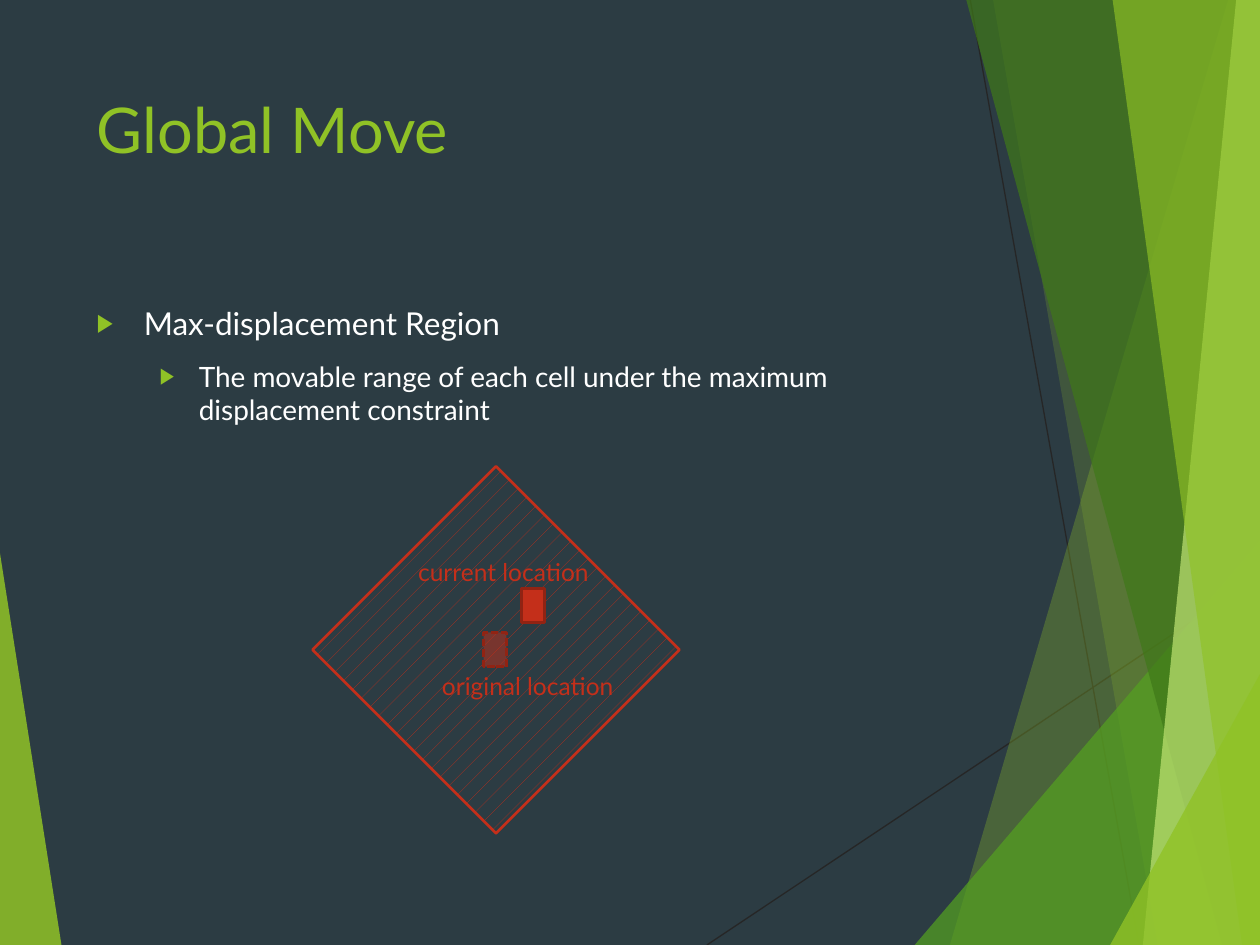
from lxml import etree
from pptx import Presentation
from pptx.dml.color import RGBColor
from pptx.enum.dml import MSO_LINE, MSO_PATTERN
from pptx.enum.shapes import MSO_CONNECTOR, MSO_SHAPE
from pptx.enum.text import MSO_ANCHOR, MSO_AUTO_SIZE, PP_ALIGN
from pptx.oxml.ns import qn
from pptx.util import Cm, Pt

DIAMOND, RECTANGLE = MSO_SHAPE.DIAMOND, MSO_SHAPE.RECTANGLE
STRAIGHT = MSO_CONNECTOR.STRAIGHT
DOTTED_HATCH = MSO_PATTERN.PERCENT_5
SHORT_DASH = MSO_LINE.SQUARE_DOT
LEFT, TOP = PP_ALIGN.LEFT, MSO_ANCHOR.TOP
FIXED, GROW = MSO_AUTO_SIZE.NONE, MSO_AUTO_SIZE.SHAPE_TO_FIT_TEXT

SLATE = RGBColor(0x2C, 0x3C, 0x43)
CHARCOAL = RGBColor(0x26, 0x26, 0x26)
LIME = RGBColor(0x90, 0xC2, 0x26)
GREEN = RGBColor(0x54, 0xA0, 0x21)
FOREST = RGBColor(0x3F, 0x78, 0x19)
PALE_LIME = RGBColor(0xC0, 0xE4, 0x74)
WHITE = RGBColor(0xFF, 0xFF, 0xFF)
RED = RGBColor(0xC4, 0x2F, 0x1A)
DARK_RED = RGBColor(0x91, 0x23, 0x13)

WIDTH, HEIGHT = 25.4, 19.05  # cm


class SlideBuilder:
    """Holds the style and the current slide; lengths are in centimetres."""

    font = "Lato"
    outline = Pt(1.5)

    def __init__(self, slide):
        self.slide = slide
        self.shapes = slide.shapes
        slide.background.fill.solid()
        slide.background.fill.fore_color.rgb = SLATE

    def style(self, paragraph, size, color):
        paragraph.alignment = LEFT
        for run in paragraph.runs:
            run.font.name = self.font
            run.font.size = Pt(size)
            run.font.color.rgb = color

    def paint(self, shape, color, opacity=100):
        shape.shadow.inherit = False
        shape.fill.solid()
        shape.fill.fore_color.rgb = color
        if opacity < 100:
            solid = shape.fill._xPr.find(qn("a:solidFill"))
            etree.SubElement(solid[0], qn("a:alpha"), val=str(opacity * 1000))

    def edge(self, shape, color):
        shape.line.color.rgb = color
        shape.line.width = self.outline

    def line(self, start, end):
        connector = self.shapes.add_connector(
            STRAIGHT, *(Cm(value) for value in start + end))
        connector.line.color.rgb = CHARCOAL
        connector.line.width = Pt(0.75)
        etree.SubElement(connector._element.spPr, qn("a:effectLst"))

    def polygon(self, points, color, opacity):
        first, *rest = [(Cm(x), Cm(y)) for x, y in points]
        builder = self.shapes.build_freeform(*first)
        builder.add_line_segments(rest, close=True)
        shape = builder.convert_to_shape()
        self.paint(shape, color, opacity)
        shape.line.fill.background()

    def title(self, text, left, top, width, height):
        title = self.shapes.title
        title.left, title.top = Cm(left), Cm(top)
        title.width, title.height = Cm(width), Cm(height)
        frame = title.text_frame
        frame.text = text
        frame.vertical_anchor = TOP
        frame.auto_size = FIXED
        self.style(frame.paragraphs[0], 36, LIME)

    def bullets(self, items, left, top, width, height):
        frame = self.shapes.add_textbox(
            Cm(left), Cm(top), Cm(width), Cm(height)).text_frame
        frame.word_wrap = True
        for index, (text, level, size, margin, hanging) in enumerate(items):
            paragraph = frame.add_paragraph() if index else frame.paragraphs[0]
            paragraph.text = text
            paragraph.level = level
            paragraph.space_before = Pt(10)
            self.style(paragraph, size, WHITE)
            props = paragraph._p.get_or_add_pPr()
            props.set("marL", str(Cm(margin)))
            props.set("indent", str(-Cm(hanging)))
            bullet_color = etree.SubElement(props, qn("a:buClr"))
            etree.SubElement(bullet_color, qn("a:srgbClr"), val=str(LIME))
            etree.SubElement(props, qn("a:buSzPct"), val="80000")
            etree.SubElement(props, qn("a:buFont"), typeface="Arial")
            etree.SubElement(props, qn("a:buChar"), char="▶")

    def region(self, left, top, size):
        diamond = self.shapes.add_shape(
            DIAMOND, Cm(left), Cm(top), Cm(size), Cm(size))
        diamond.shadow.inherit = False
        diamond.fill.patterned()
        diamond.fill.pattern = DOTTED_HATCH
        diamond.fill.fore_color.rgb = RED
        diamond.fill.back_color.rgb = SLATE
        self.edge(diamond, RED)

    def cell(self, left, top, opacity=100, dash=None):
        cell = self.shapes.add_shape(
            RECTANGLE, Cm(left), Cm(top), Cm(0.46), Cm(0.69))
        self.paint(cell, RED, opacity)
        self.edge(cell, DARK_RED)
        if dash:
            cell.line.dash_style = dash

    def label(self, text, left, top, width):
        frame = self.shapes.add_textbox(
            Cm(left), Cm(top), Cm(width), Cm(0.86)).text_frame
        frame.text = text
        frame.word_wrap = False
        frame.auto_size = GROW
        self.style(frame.paragraphs[0], 14, RED)


def band(top_x, bottom_x):
    """Outline from a slanted edge to the right side of the slide."""
    return [(top_x, 0), (bottom_x, HEIGHT), (WIDTH, HEIGHT), (WIDTH, 0)]


def corner(bottom_x, right_y):
    """Triangle in the lower right corner of the slide."""
    return [(bottom_x, HEIGHT), (WIDTH, right_y), (WIDTH, HEIGHT)]


def main():
    prs = Presentation()
    prs.slide_width, prs.slide_height = Cm(WIDTH), Cm(HEIGHT)
    page = SlideBuilder(prs.slides.add_slide(prs.slide_layouts[5]))

    # Backdrop: thin lines, then translucent facets
    page.line((14.25, HEIGHT), (WIDTH, 11.61))
    page.line((19.56, 0), (22.96, HEIGHT))
    facets = [
        ([(0, 11.15), (1.24, HEIGHT), (0, HEIGHT)], LIME, 85),
        (band(24.76, 19.15), LIME, 30),
        (band(20.02, 23.34), LIME, 20),
        (corner(18.44, 10.9), GREEN, 72),
        (band(19.48, 24.64), FOREST, 70),
        (band(24.92, 23.04), PALE_LIME, 70),
        (band(22.43, 25.04), LIME, 65),
        (corner(22.38, 13.59), LIME, 80),
    ]
    for points, color, opacity in facets:
        page.polygon(points, color, opacity)

    # Title and bullets
    page.title("Global Move", 1.7, 1.7, 17.63, 3.66)
    page.bullets([
        ("Max-displacement Region", 0, 18, 0.95, 0.95),
        ("The movable range of each cell under the maximum "
         "displacement constraint", 1, 16, 2.06, 0.79),
    ], 1.7, 6, 17.63, 10.77)

    # Displacement region with the current and original cell
    page.region(6.3, 9.4, 7.4)
    page.cell(10.52, 11.86)
    page.cell(9.75, 12.75, opacity=50, dash=SHORT_DASH)
    page.label("original location", 8.66, 13.41, 4.14)
    page.label("current location", 8.18, 11.1, 4.11)

    prs.save("out.pptx")


if __name__ == "__main__":
    main()
